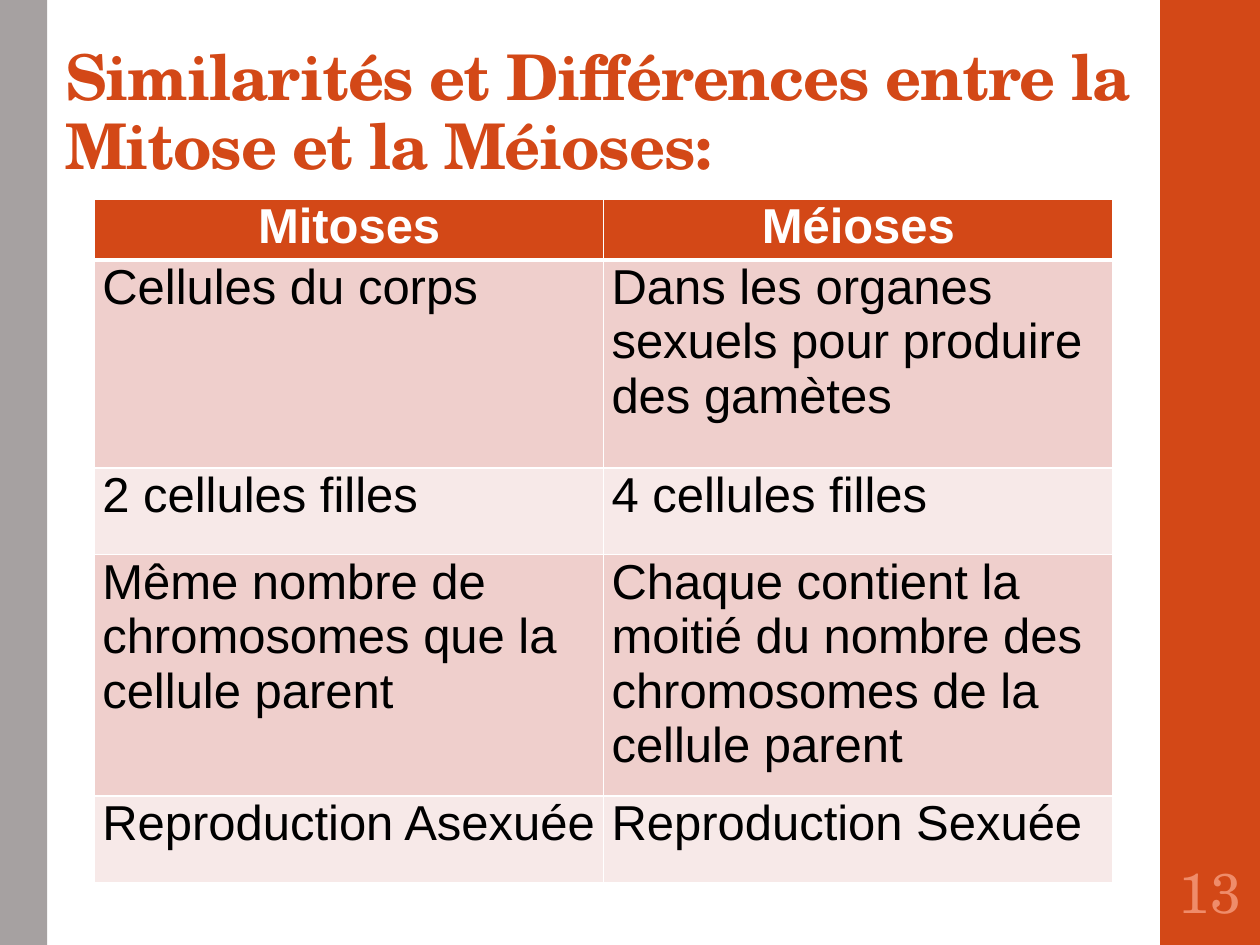
"""Build a slide comparing mitosis and meiosis in a two-column table."""
from dataclasses import dataclass

from lxml.etree import SubElement
from pptx import Presentation
from pptx.dml.color import RGBColor
from pptx.enum.shapes import MSO_SHAPE
from pptx.enum.text import MSO_ANCHOR, MSO_AUTO_SIZE, PP_ALIGN
from pptx.oxml.ns import qn
from pptx.util import Pt

ORANGE = RGBColor(0xD3, 0x48, 0x17)
GREY = RGBColor(0xA6, 0xA1, 0xA1)
PALE_ORANGE = RGBColor(0xEF, 0x8C, 0x6A)
DARK_BAND = RGBColor(0xEF, 0xCF, 0xCC)
LIGHT_BAND = RGBColor(0xF7, 0xE9, 0xE8)
WHITE = RGBColor(0xFF, 0xFF, 0xFF)
BLACK = RGBColor(0x00, 0x00, 0x00)
HEADING_FONT = "TeX Gyre Schola"
BODY_FONT = "Arial"
SLIDE_WIDTH, SLIDE_HEIGHT = 720, 540


@dataclass(frozen=True)
class Box:
    left: float
    top: float
    width: float
    height: float

    def lengths(self) -> tuple:
        return Pt(self.left), Pt(self.top), Pt(self.width), Pt(self.height)


@dataclass(frozen=True)
class TextStyle:
    font: str
    size: float
    color: RGBColor
    bold: bool = False
    alignment: PP_ALIGN = PP_ALIGN.LEFT


@dataclass(frozen=True)
class ComparisonRow:
    mitosis: str
    meiosis: str
    height: float


@dataclass(frozen=True)
class SideBar:
    box: Box
    color: RGBColor


SIDE_BARS = (
    SideBar(Box(663, 0, SLIDE_WIDTH - 663, SLIDE_HEIGHT), ORANGE),
    SideBar(Box(0, 0, 27, SLIDE_HEIGHT), GREY),
)
TITLE_BOX = Box(30, 42, 648, 66)
TABLE_BOX = Box(54, 114, 582, 390.5)
NUMBER_BOX = Box(664.5, 486, 54, 46.8)
ROWS = (
    ComparisonRow("Mitoses", "Méioses", 34.5),
    ComparisonRow("Cellules du corps", "Dans les organes sexuels pour produire des gamètes", 119),
    ComparisonRow("2 cellules filles", "4 cellules filles", 49.5),
    ComparisonRow(
        "Même nombre de chromosomes que la cellule parent",
        "Chaque contient la moitié du nombre des chromosomes de la cellule parent",
        138,
    ),
    ComparisonRow("Reproduction Asexuée", "Reproduction Sexuée", 49.5),
)
TITLE_STYLE = TextStyle(HEADING_FONT, 36, ORANGE, bold=True)
NUMBER_STYLE = TextStyle(HEADING_FONT, 32, PALE_ORANGE, alignment=PP_ALIGN.CENTER)
HEADER_STYLE = TextStyle(BODY_FONT, 28, WHITE, bold=True, alignment=PP_ALIGN.CENTER)
CELL_STYLE = TextStyle(BODY_FONT, 28, BLACK)


def write_text(text_frame, text: str, style: TextStyle):
    paragraph = text_frame.paragraphs[0]
    paragraph.alignment = style.alignment
    run = paragraph.add_run()
    run.text = text
    run.font.name = style.font
    run.font.size = Pt(style.size)
    run.font.bold = style.bold
    run.font.color.rgb = style.color
    return run


def draw_side_bar(slide, side_bar: SideBar) -> None:
    shape = slide.shapes.add_shape(MSO_SHAPE.RECTANGLE, *side_bar.box.lengths())
    shape.shadow.inherit = False
    shape.fill.solid()
    shape.fill.fore_color.rgb = side_bar.color
    shape.line.fill.background()


def draw_title(slide, text: str) -> None:
    title = slide.shapes.title
    title.left, title.top, title.width, title.height = TITLE_BOX.lengths()
    text_frame = title.text_frame
    text_frame.word_wrap = True
    text_frame.auto_size = MSO_AUTO_SIZE.NONE
    text_frame.vertical_anchor = MSO_ANCHOR.BOTTOM
    run = write_text(text_frame, text, TITLE_STYLE)
    run.font._element.set("spc", "-70")
    text_frame.paragraphs[0].line_spacing = 0.9


def add_borders(cell, top_width: float, bottom_width: float) -> None:
    properties = cell._tc.get_or_add_tcPr()
    widths = {"a:lnL": 1, "a:lnR": 1, "a:lnT": top_width, "a:lnB": bottom_width}
    for tag, width in widths.items():
        line = SubElement(properties, qn(tag), w=str(Pt(width)))
        fill = SubElement(line, qn("a:solidFill"))
        SubElement(fill, qn("a:srgbClr"), val=str(WHITE))


def format_cell(cell, text: str, row_index: int) -> None:
    is_header = row_index == 0
    cell.margin_left = cell.margin_right = Pt(4.5)
    cell.margin_top = cell.margin_bottom = Pt(0)
    add_borders(cell, 3 if row_index == 1 else 1, 3 if is_header else 1)
    cell.fill.solid()
    band = DARK_BAND if row_index % 2 else LIGHT_BAND
    cell.fill.fore_color.rgb = ORANGE if is_header else band
    write_text(cell.text_frame, text, HEADER_STYLE if is_header else CELL_STYLE)


def draw_comparison(slide) -> None:
    table = slide.shapes.add_table(len(ROWS), 2, *TABLE_BOX.lengths()).table
    for column in table.columns:
        column.width = Pt(TABLE_BOX.width / 2)
    for row_index, row in enumerate(ROWS):
        table.rows[row_index].height = Pt(row.height)
        for column_index, text in enumerate((row.mitosis, row.meiosis)):
            format_cell(table.cell(row_index, column_index), text, row_index)


def draw_slide_number(slide, number: str) -> None:
    text_frame = slide.shapes.add_textbox(*NUMBER_BOX.lengths()).text_frame
    text_frame.word_wrap = True
    text_frame.vertical_anchor = MSO_ANCHOR.MIDDLE
    text_frame.margin_left = text_frame.margin_right = Pt(2)
    write_text(text_frame, number, NUMBER_STYLE)


def main() -> None:
    presentation = Presentation()
    presentation.slide_width = Pt(SLIDE_WIDTH)
    presentation.slide_height = Pt(SLIDE_HEIGHT)
    slide = presentation.slides.add_slide(presentation.slide_layouts[5])
    for side_bar in SIDE_BARS:
        draw_side_bar(slide, side_bar)
    draw_title(slide, "Similarités et Différences entre la Mitose et la Méioses:")
    draw_comparison(slide)
    draw_slide_number(slide, "13")
    presentation.save("out.pptx")


if __name__ == "__main__":
    main()
